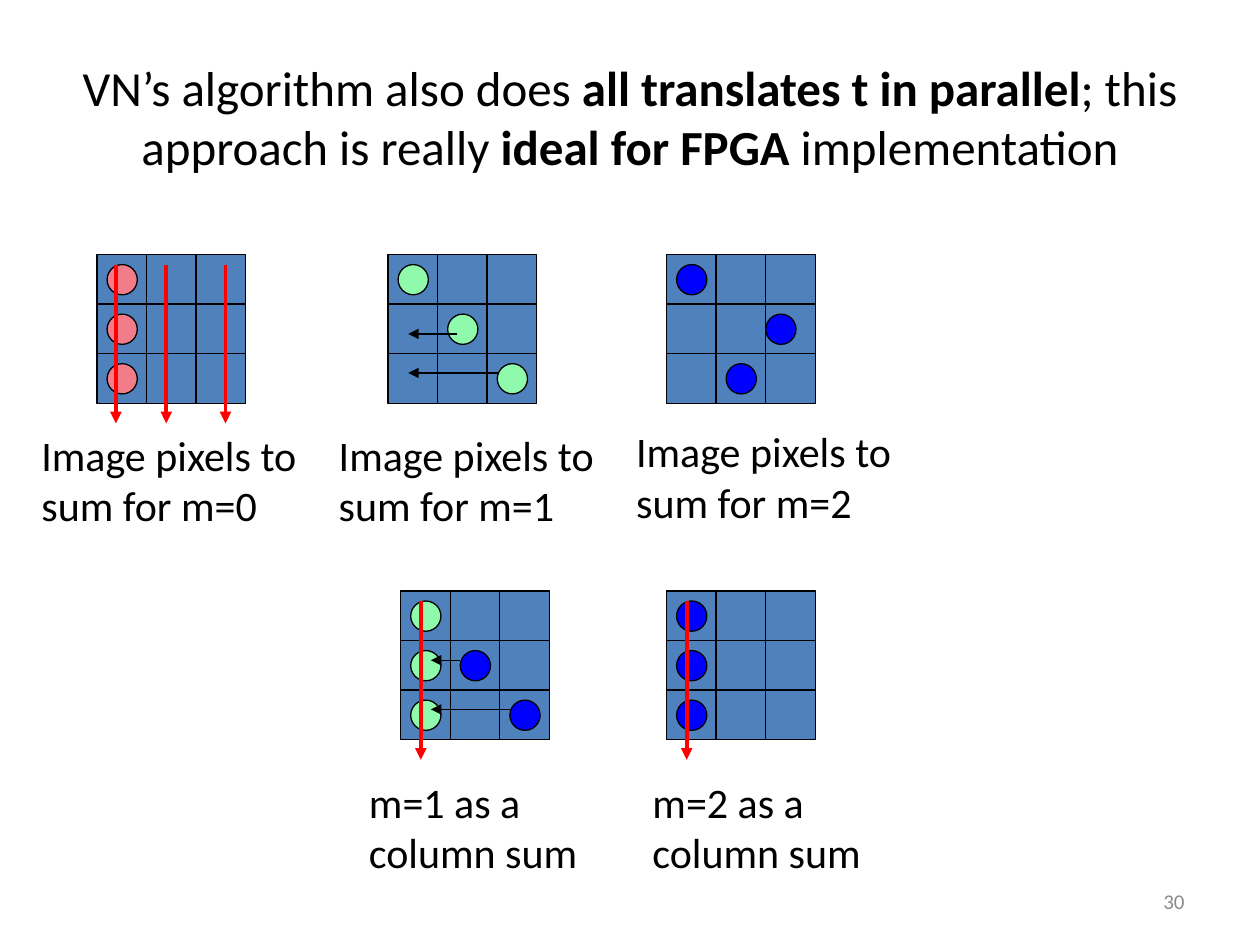
from pptx import Presentation
from pptx.util import Inches, Pt
from pptx.dml.color import RGBColor
from pptx.enum.shapes import MSO_SHAPE, MSO_CONNECTOR
from pptx.enum.text import MSO_ANCHOR, PP_ALIGN
from lxml.etree import SubElement

A = "{http://schemas.openxmlformats.org/drawingml/2006/main}"
RED, BLACK = "FF0000", "000000"
PINK, GREEN, BLUE = "F27C8A", "90FAAC", "0000FF"
CELL = 1.18 / 3


def color(value):
    return RGBColor.from_string(value)


def text(runs, x, y, w, h, size=24, fill=BLACK, align=PP_ALIGN.LEFT, anchor=MSO_ANCHOR.TOP):
    tf = s.shapes.add_textbox(Inches(x), Inches(y), Inches(w), Inches(h)).text_frame
    tf.word_wrap = True
    tf.vertical_anchor = anchor
    p = tf.paragraphs[0]
    p.alignment = align
    for content, bold in runs:
        r = p.add_run()
        r.text = content
        r.font.name = "Calibri"
        r.font.size = Pt(size)
        r.font.bold = bold
        r.font.color.rgb = color(fill)


prs = Presentation()
prs.slide_width, prs.slide_height = Inches(10), Inches(7.5)
s = prs.slides.add_slide(prs.slide_layouts[6])

text([("VN’s algorithm also does ", False),
      ("all translates t in parallel", True),
      ("; this approach is really ", False),
      ("ideal for FPGA ", True),
      ("implementation", False)],
     0.5, 0.3, 9, 1.25, size=28, align=PP_ALIGN.CENTER, anchor=MSO_ANCHOR.MIDDLE)

panels = [
    (0.77, 2.02, [(0, 0, PINK), (0, 1, PINK), (0, 2, PINK)],
     [0.15, 0.55, 1.02], []),
    (3.08, 2.02, [(0, 0, GREEN), (1, 1, GREEN), (2, 2, GREEN)],
     [], [(0.55, 0.16, 0.63), (0.87, 0.16, 0.94)]),
    (5.29, 2.02, [(0, 0, BLUE), (1.8, 1, BLUE), (1, 2, BLUE)],
     [], []),
    (3.18, 4.69, [(0, 0, GREEN), (0, 1, GREEN), (0, 2, GREEN), (1, 1, BLUE), (2, 2, BLUE)],
     [0.16], [(0.47, 0.24, 0.55), (0.87, 0.24, 0.94)]),
    (5.29, 4.69, [(0, 0, BLUE), (0, 1, BLUE), (0, 2, BLUE)],
     [0.16], []),
]
for left, top, dots, columns, shifts in panels:
    grp = s.shapes.add_group_shape()
    parts = [(MSO_SHAPE.RECTANGLE, col * CELL, row * CELL, CELL, "4F81BD")
             for row in range(3) for col in range(3)]
    parts += [(MSO_SHAPE.OVAL, col * CELL + 0.08, row * CELL + 0.08, 0.24, fill)
              for col, row, fill in dots]
    for kind, x, y, size, fill in parts:
        sp = grp.shapes.add_shape(kind, Inches(left + x), Inches(top + y), Inches(size), Inches(size))
        sp.shadow.inherit = False
        sp.fill.solid()
        sp.fill.fore_color.rgb = color(fill)
        sp.line.color.rgb = color(BLACK)
        sp.line.width = Pt(0.75)

    arrows = [(x, 0.08, x, 1.34, RED, 2.25) for x in columns]
    arrows += [(x1, y, x2, y, BLACK, 0.75) for x1, x2, y in shifts]
    for x1, y1, x2, y2, fill, width in arrows:
        cx = grp.shapes.add_connector(MSO_CONNECTOR.STRAIGHT, Inches(left + x1), Inches(top + y1),
                                      Inches(left + x2), Inches(top + y2))
        cx.line.color.rgb = color(fill)
        cx.line.width = Pt(width)
        SubElement(cx.line._get_or_add_ln(), A + "tailEnd", type="triangle")
        SubElement(cx._element.spPr, A + "effectLst")

captions = [
    ("Image pixels to sum for m=0", 0.23, 3.36, 2.25),
    ("Image pixels to sum for m=1", 2.59, 3.36, 2.27),
    ("Image pixels to sum for m=2", 4.95, 3.33, 2.32),
    ("m=1 as a column sum", 2.83, 6.11, 1.99),
    ("m=2 as a column sum", 5.08, 6.11, 1.99),
]
for caption, x, y, w in captions:
    text([(caption, False)], x, y, w, 0.91)

text([("30", False)], 7.17, 6.95, 2.33, 0.4, size=12, fill="8C8C8C",
     align=PP_ALIGN.RIGHT, anchor=MSO_ANCHOR.MIDDLE)

prs.save("out.pptx")
